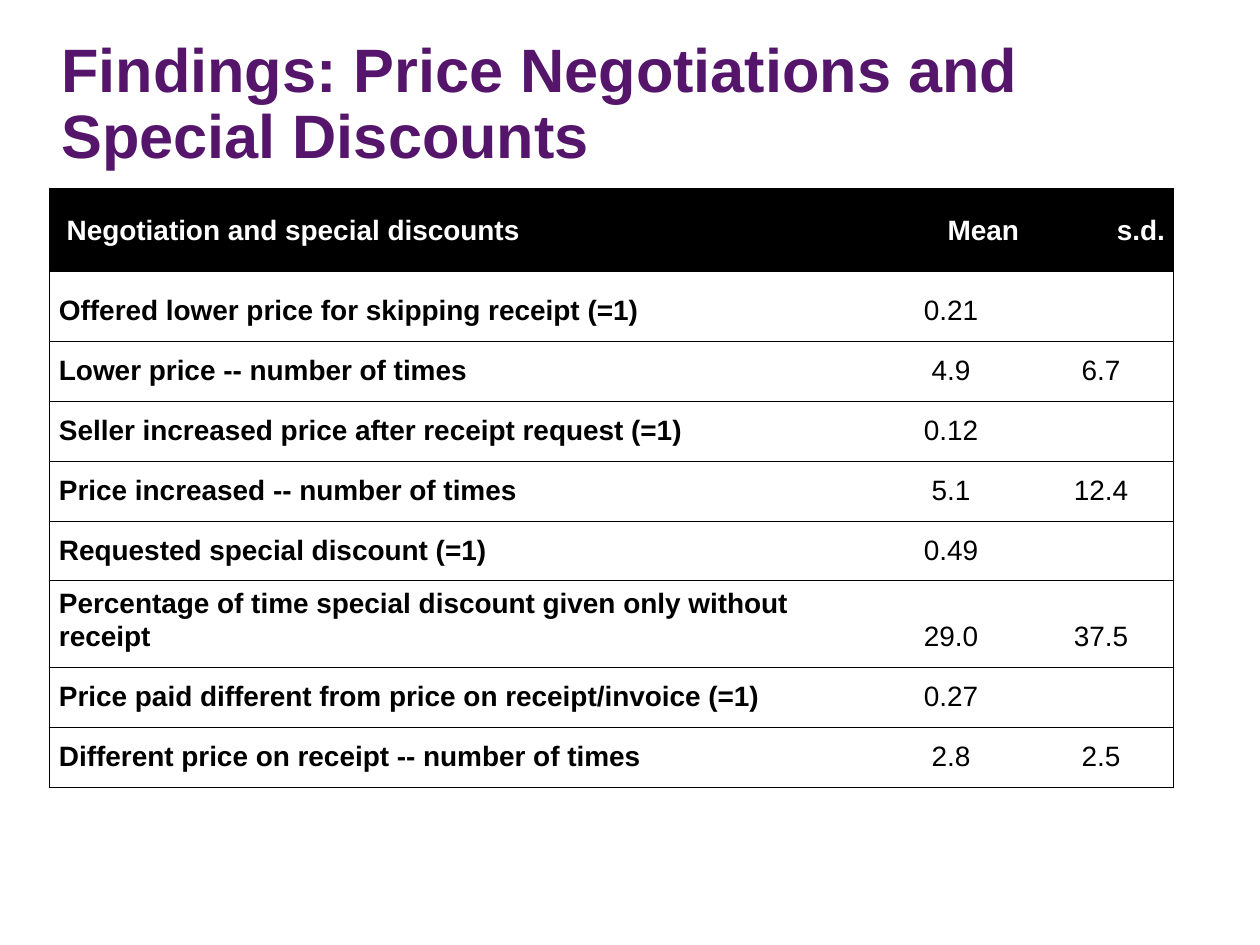
from pptx import Presentation
from pptx.dml.color import RGBColor
from pptx.enum.text import MSO_ANCHOR as Anchor, PP_ALIGN as Align
from pptx.util import Pt
from lxml.etree import SubElement
from pptx.oxml.ns import qn

TITLE = "Findings: Price Negotiations and Special Discounts"
ROWS = [
    (" Negotiation and special discounts", "Mean", "s.d."),
    ("Offered lower price for skipping receipt (=1)", "0.21", ""),
    ("Lower price -- number of times", "4.9", "6.7"),
    ("Seller increased price after receipt request (=1)", "0.12", ""),
    ("Price increased -- number of times", "5.1", "12.4"),
    ("Requested special discount (=1)", "0.49", ""),
    ("Percentage of time special discount given only without receipt", "29.0", "37.5"),
    ("Price paid different from price on receipt/invoice (=1)", "0.27", ""),
    ("Different price on receipt -- number of times", "2.8", "2.5"),
]
COLUMN_WIDTHS = (824, 154, 146)
ROW_HEIGHTS = (83, 70) + (60,) * 7

PURPLE = RGBColor(0x54, 0x15, 0x6B)
BLACK = RGBColor(0, 0, 0)
WHITE = RGBColor(255, 255, 255)
FONT = "Arial"


def px(value):
    return round(value * 914400 / 126)


def style_font(font, size, color, bold):
    font.name = FONT
    font.size = Pt(size)
    font.bold = bold
    font.color.rgb = color


def add_borders(cell, visible_sides):
    properties = cell._tc.get_or_add_tcPr()
    for side in "LRTB":
        line = SubElement(properties, qn(f"a:ln{side}"), w=str(Pt(0.5)))
        if side in visible_sides:
            fill = SubElement(line, qn("a:solidFill"))
            SubElement(fill, qn("a:srgbClr"), val=str(BLACK))
        else:
            SubElement(line, qn("a:noFill"))


def format_cell(cell, text, row, column):
    header = row == 0
    sides = "TB" + {0: "L", len(COLUMN_WIDTHS) - 1: "R"}.get(column, "")
    add_borders(cell, sides)
    if header:
        cell.fill.solid()
        cell.fill.fore_color.rgb = BLACK
    else:
        cell.fill.background()
    if not text:
        return
    cell.margin_left, cell.margin_right = px(10), px(8)
    cell.margin_top, cell.margin_bottom = px(15 if header else 0), px(15)
    cell.vertical_anchor = Anchor.MIDDLE if header else Anchor.BOTTOM
    cell.text = text
    paragraph = cell.text_frame.paragraphs[0]
    if column:
        paragraph.alignment = Align.RIGHT if header else Align.CENTER
    paragraph.line_spacing = 1.07
    paragraph.space_after = Pt(8)
    style_font(paragraph.font, 16, WHITE if header else BLACK, header or column == 0)


presentation = Presentation()
presentation.slide_width, presentation.slide_height = px(1260), px(945)
slide = presentation.slides.add_slide(presentation.slide_layouts[6])

title = slide.shapes.add_textbox(px(49), px(14), px(1142), px(184)).text_frame
title.word_wrap = True
title.vertical_anchor = Anchor.MIDDLE
title.text = TITLE
heading = title.paragraphs[0]
heading.line_spacing = 0.9
heading.space_after = Pt(6)
style_font(heading.font, 35, PURPLE, True)

table = slide.shapes.add_table(
    len(ROWS), len(COLUMN_WIDTHS), px(49), px(188),
    px(sum(COLUMN_WIDTHS)), px(sum(ROW_HEIGHTS)),
).table
table.first_row = table.horz_banding = False
for column, width in zip(table.columns, COLUMN_WIDTHS):
    column.width = px(width)
for row, height in zip(table.rows, ROW_HEIGHTS):
    row.height = px(height)
for row_index, values in enumerate(ROWS):
    for column_index, value in enumerate(values):
        format_cell(table.cell(row_index, column_index), value, row_index, column_index)

presentation.save("out.pptx")
